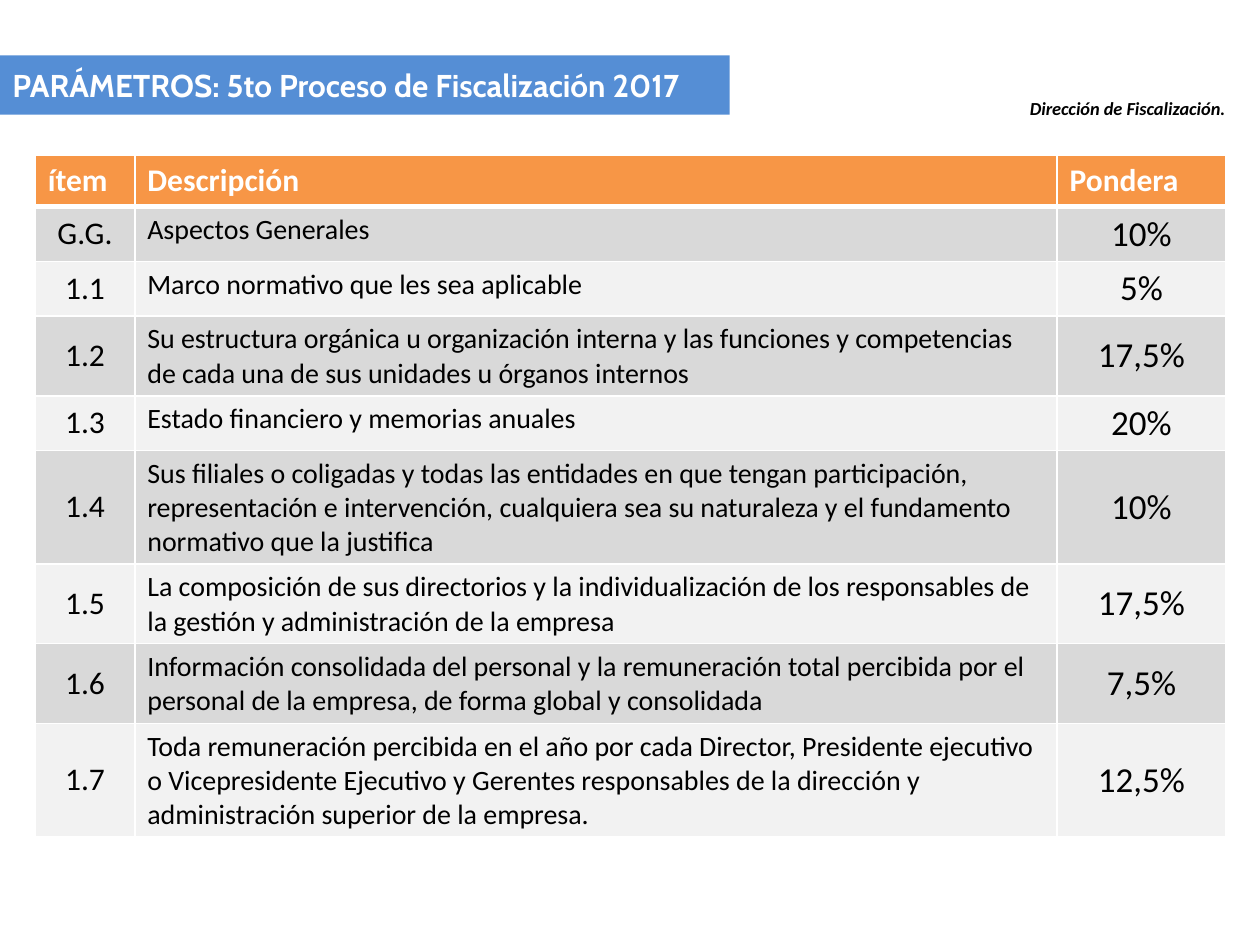
from dataclasses import dataclass

from lxml.etree import SubElement
from pptx import Presentation
from pptx.dml.color import RGBColor
from pptx.enum.shapes import MSO_SHAPE
from pptx.enum.text import MSO_ANCHOR as Anchor, MSO_AUTO_SIZE, PP_ALIGN as Align
from pptx.oxml.ns import qn
from pptx.util import Inches, Pt

WHITE, BLACK = "FFFFFF", "000000"
BLUE, ORANGE = "558ED5", "F79646"
BANDS = ("D9D9D9", "F2F2F2")
COLUMN_WIDTHS = (0.79, 7.32, 1.34)
ROW_HEIGHT = 0.41


@dataclass(frozen=True)
class TextStyle:
    size: float
    color: str = BLACK
    bold: bool = False
    italic: bool = False
    font: str = "Calibri"
    align: Align = Align.LEFT
    anchor: Anchor = Anchor.TOP


@dataclass(frozen=True)
class Parameter:
    item: str
    description: str
    weight: str


HEADER = Parameter("ítem", "Descripción", "Pondera")
PARAMETERS = (
    Parameter("G.G.", "Aspectos Generales", "10%"),
    Parameter("1.1", "Marco normativo que les sea aplicable", "5%"),
    Parameter("1.2", "Su estructura orgánica u organización interna y las funciones y "
              "competencias de cada una de sus unidades u órganos internos", "17,5%"),
    Parameter("1.3", "Estado financiero y memorias anuales", "20%"),
    Parameter("1.4", "Sus filiales o coligadas y todas las entidades en que tengan "
              "participación, representación e intervención, cualquiera sea su "
              "naturaleza y el fundamento normativo que la justifica", "10%"),
    Parameter("1.5", "La composición de sus directorios y la individualización de los "
              "responsables de la gestión y administración de la empresa", "17,5%"),
    Parameter("1.6", "Información consolidada del personal y la remuneración total "
              "percibida por el personal de la empresa, de forma global y "
              "consolidada", "7,5%"),
    Parameter("1.7", "Toda remuneración percibida en el año por cada Director, "
              "Presidente ejecutivo o Vicepresidente Ejecutivo y Gerentes responsables "
              "de la dirección y administración superior de la empresa.", "12,5%"),
)

HEADER_STYLE = TextStyle(18, WHITE, bold=True)
BODY_STYLES = (
    TextStyle(18, align=Align.CENTER, anchor=Anchor.MIDDLE),
    TextStyle(16),
    TextStyle(20, align=Align.CENTER, anchor=Anchor.MIDDLE),
)


def set_fill(target, color: str) -> None:
    target.fill.solid()
    target.fill.fore_color.rgb = RGBColor.from_string(color)


def write(text_frame, text: str, style: TextStyle) -> None:
    text_frame.text = text
    paragraph = text_frame.paragraphs[0]
    paragraph.alignment = style.align
    font = paragraph.runs[0].font
    font.name, font.size = style.font, Pt(style.size)
    font.bold, font.italic = style.bold, style.italic
    font.color.rgb = RGBColor.from_string(style.color)


def set_borders(cell, top: float, bottom: float) -> None:
    """Draw white borders; the schema wants them ahead of the cell fill."""
    properties = cell._tc.get_or_add_tcPr()
    widths = {"a:lnL": 1, "a:lnR": 1, "a:lnT": top, "a:lnB": bottom}
    for position, (tag, width) in enumerate(widths.items()):
        line = SubElement(properties, qn(tag), w=str(Pt(width)))
        SubElement(SubElement(line, qn("a:solidFill")), qn("a:srgbClr"), val=WHITE)
        properties.insert(position, line)


def add_department(slide) -> None:
    box = slide.shapes.add_textbox(Inches(7.86), Inches(0.72), Inches(2.18), Inches(0.28))
    box.text_frame.word_wrap = True
    box.text_frame.auto_size = MSO_AUTO_SIZE.SHAPE_TO_FIT_TEXT
    write(box.text_frame, "Dirección de Fiscalización.",
          TextStyle(10.5, bold=True, italic=True, align=Align.CENTER))


def add_title(slide) -> None:
    banner = slide.shapes.add_shape(
        MSO_SHAPE.RECTANGLE, 0, Inches(0.44), Inches(5.79), Inches(0.47))
    banner.shadow.inherit = False
    set_fill(banner, BLUE)
    banner.line.fill.background()
    banner.text_frame.vertical_anchor = Anchor.MIDDLE
    write(banner.text_frame, "PARÁMETROS: 5to Proceso de Fiscalización 2017",
          TextStyle(18, WHITE, bold=True, font="Cabin"))


def add_parameter_table(slide) -> None:
    rows = (HEADER, *PARAMETERS)
    table = slide.shapes.add_table(
        len(rows), len(COLUMN_WIDTHS), Inches(0.28), Inches(1.23),
        Inches(sum(COLUMN_WIDTHS)), Inches(ROW_HEIGHT * len(rows))).table
    for column, width in zip(table.columns, COLUMN_WIDTHS):
        column.width = Inches(width)
    for index, (row, parameter) in enumerate(zip(table.rows, rows)):
        row.height = Inches(ROW_HEIGHT)
        is_header = index == 0
        color = ORANGE if is_header else BANDS[(index - 1) % 2]
        styles = (HEADER_STYLE,) * 3 if is_header else BODY_STYLES
        texts = (parameter.item, parameter.description, parameter.weight)
        for cell, text, style in zip(row.cells, texts, styles):
            set_fill(cell, color)
            set_borders(cell, top=3 if index == 1 else 1, bottom=3 if is_header else 1)
            cell.vertical_anchor = style.anchor
            write(cell.text_frame, text, style)


def main() -> None:
    presentation = Presentation()
    presentation.slide_width, presentation.slide_height = Inches(10), Inches(7.5)
    slide = presentation.slides.add_slide(presentation.slide_layouts[6])
    add_department(slide)
    add_title(slide)
    add_parameter_table(slide)
    presentation.save("out.pptx")


if __name__ == "__main__":
    main()
